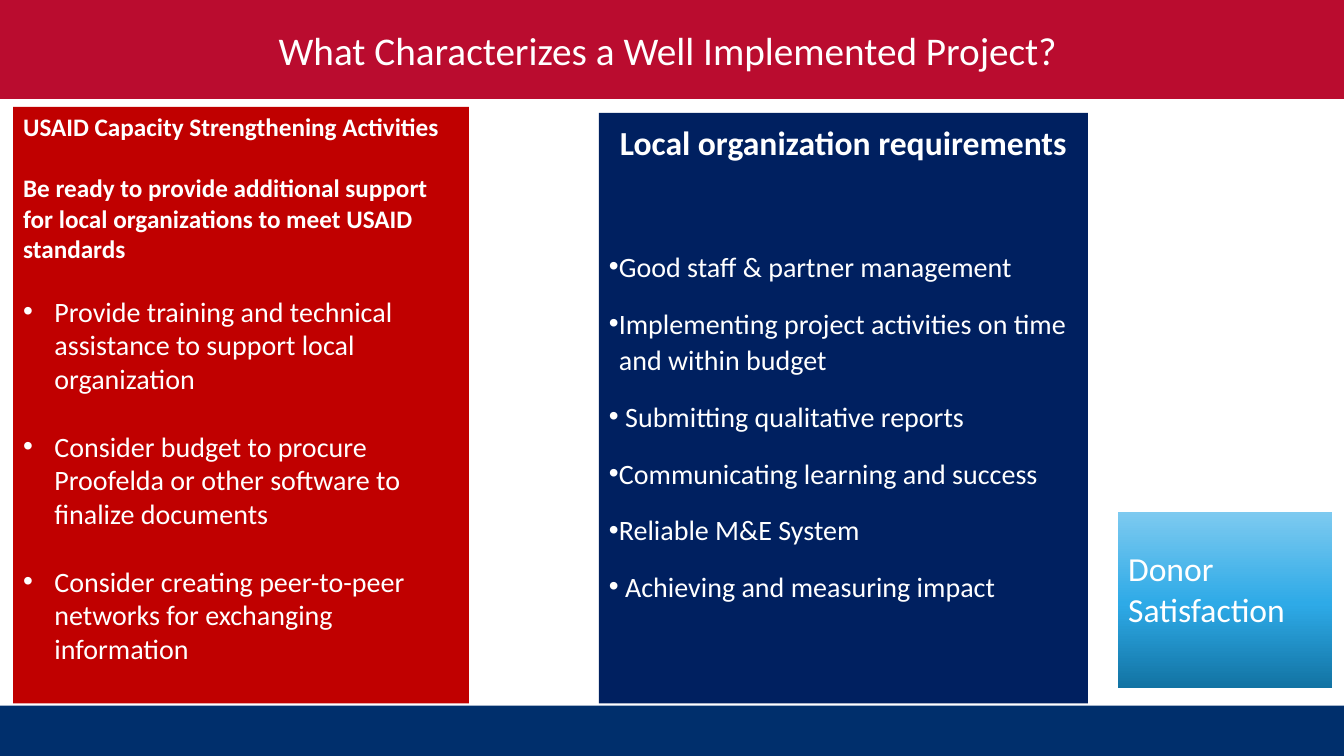
from copy import deepcopy
from dataclasses import dataclass

from pptx import Presentation
from pptx.dml.color import RGBColor
from pptx.enum.shapes import MSO_SHAPE
from pptx.enum.text import MSO_ANCHOR, MSO_AUTO_SIZE, PP_ALIGN
from pptx.oxml import parse_xml
from pptx.oxml.ns import nsdecls, qn
from pptx.util import Inches, Pt


@dataclass(frozen=True)
class Theme:
    font: str = "Calibri"
    text: str = "FFFFFF"
    banner: str = "BA0C2F"
    footer: str = "002F6C"
    support: str = "C00000"
    local: str = "002060"
    donor: tuple = ((0, "1273A3"), (0.48, "2EAAE7"), (1, "7DCAF0"))
    title: int = 28
    heading: int = 24
    body: int = 20
    lead: int = 18


def apply(target, formats):
    for name, value in formats.items():
        setattr(target, name, value)


class SlideBuilder:
    """Places elements on a grid of 100 columns by 100 rows."""

    def __init__(self, prs, theme):
        self.prs, self.theme = prs, theme
        self.s = prs.slides.add_slide(prs.slide_layouts[5])

    def box(self, col, row, cols, rows):
        w, h = self.prs.slide_width / 100, self.prs.slide_height / 100
        return [round(v) for v in (col * w, row * h, cols * w, rows * h)]

    def paint(self, sp, fill):
        """Fill with one colour, or with gradient stops running upwards."""
        if isinstance(fill, str):
            sp.fill.solid()
            sp.fill.fore_color.rgb = RGBColor.from_string(fill)
            return
        sp.fill.gradient()
        sp.fill.gradient_angle = 90
        stops = sp._element.spPr.find(".//" + qn("a:gsLst"))
        stops.insert(1, deepcopy(stops[0]))
        for stop, (position, color) in zip(sp.fill.gradient_stops, fill):
            stop.position = position
            stop.color.rgb = RGBColor.from_string(color)

    def title(self, text, grid, fill):
        sp = self.s.shapes.title
        apply(sp, dict(zip(("left", "top", "width", "height"), self.box(*grid))))
        self.paint(sp, fill)
        apply(sp.text_frame, {"word_wrap": True, "auto_size": MSO_AUTO_SIZE.NONE,
                              "vertical_anchor": MSO_ANCHOR.MIDDLE})
        self.paragraph(sp.text_frame.paragraphs[0], text, self.theme.title,
                       alignment=PP_ALIGN.CENTER)

    def panel(self, grid, fill, top_inset=0.05):
        sp = self.s.shapes.add_shape(MSO_SHAPE.RECTANGLE, *self.box(*grid))
        sp.shadow.inherit = False
        sp.line.fill.background()
        self.paint(sp, fill)
        tf = sp.text_frame
        apply(tf, {"word_wrap": True, "vertical_anchor": MSO_ANCHOR.TOP,
                   "margin_top": Inches(top_inset)})
        return tf

    def add_text(self, tf, text, size, **options):
        p = tf.paragraphs[0]
        if p.runs:
            p = tf.add_paragraph()
        self.paragraph(p, text, size, **options)

    def paragraph(self, p, text, size, bold=False, bullet_indent=None, **formats):
        apply(p, {"alignment": PP_ALIGN.LEFT, **formats})
        r = p.add_run()
        r.text = text
        apply(r.font, {"name": self.theme.font, "size": Pt(size), "bold": bold})
        r.font.color.rgb = RGBColor.from_string(self.theme.text)
        if bullet_indent:
            pPr = p._p.get_or_add_pPr()
            pPr.set("marL", str(Inches(bullet_indent)))
            pPr.set("indent", str(-Inches(bullet_indent)))
            for xml in (f'<a:buClr {nsdecls("a")}><a:srgbClr val="{self.theme.text}"/></a:buClr>',
                        f'<a:buFont {nsdecls("a")} typeface="Arial"/>',
                        f'<a:buChar {nsdecls("a")} char="•"/>'):
                pPr.append(parse_xml(xml))


SUPPORT_LEADS = (
    "USAID Capacity Strengthening Activities",
    "Be ready to provide additional support for local organizations to meet USAID standards",
)
SUPPORT_ACTIONS = (
    "Provide training and technical assistance to support local organization",
    "Consider budget to procure Proofelda or other software to finalize documents",
    "Consider creating peer-to-peer networks for exchanging information",
)
LOCAL_REQUIREMENTS = (
    "Good staff & partner management",
    "Implementing project activities on time and within budget",
    " Submitting qualitative reports",
    "Communicating learning and success",
    "Reliable M&E System",
    " Achieving and measuring impact",
)


def main():
    prs = Presentation()
    prs.slide_width, prs.slide_height = Inches(13.33), Inches(7.5)
    theme = Theme()
    slide = SlideBuilder(prs, theme)

    slide.panel((0, 93.33, 100, 6.67), theme.footer)
    slide.title("What Characterizes a Well Implemented Project? ",
                (0, 0, 100, 13.07), theme.banner)

    local = slide.panel((44.56, 14.93, 36.38, 78.13), theme.local)
    slide.add_text(local, "Local organization requirements", theme.heading, bold=True,
                   alignment=PP_ALIGN.CENTER, line_spacing=1.1)
    for i, text in enumerate(LOCAL_REQUIREMENTS):
        slide.add_text(local, text, theme.body, bullet_indent=0.1, line_spacing=1.1,
                       space_before=Pt(14 if i else 60))

    donor = slide.panel((83.2, 67.73, 15.9, 23.33), theme.donor, top_inset=0.36)
    slide.add_text(donor, "Donor Satisfaction", theme.heading)

    support = slide.panel((0.98, 14.13, 33.91, 78.93), theme.support)
    for i, text in enumerate(SUPPORT_LEADS):
        slide.add_text(support, text, theme.lead, bold=True, space_before=Pt(22 * i))
    for i, text in enumerate(SUPPORT_ACTIONS):
        slide.add_text(support, text, theme.body, bullet_indent=0.31,
                       space_before=Pt(24.4 if i else 22))

    prs.save("out.pptx")


if __name__ == "__main__":
    main()
